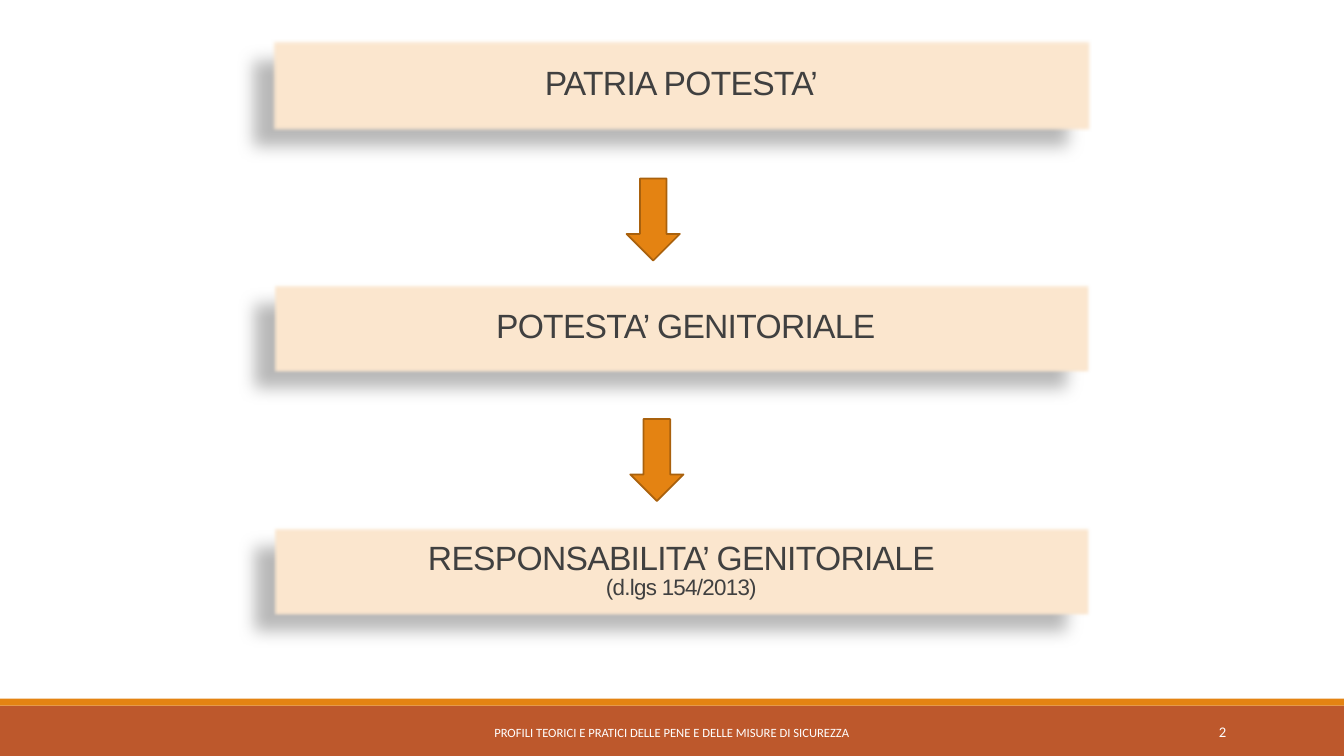
"""Build the slide on the path from patria potestà to responsabilità genitoriale."""
from lxml.etree import fromstring
from pptx import Presentation
from pptx.dml.color import RGBColor
from pptx.enum.shapes import MSO_SHAPE
from pptx.enum.text import MSO_ANCHOR, MSO_AUTO_SIZE, PP_ALIGN
from pptx.util import Pt

THEME = {
    "rust": RGBColor.from_string("BD582C"),
    "orange": RGBColor.from_string("E48312"),
    "arrow_edge": RGBColor.from_string("A9610D"),
    "cream": RGBColor.from_string("FBE6CE"),
    "ink": RGBColor.from_string("404040"),
    "white": RGBColor.from_string("FFFFFF"),
    "heading": Pt(24),
    "note": Pt(16),
    "footer": Pt(9),
    "number": Pt(10.5),
}
SOFT_SHADOW = """<a:effectLst xmlns:a="http://schemas.openxmlformats.org/drawingml/2006/main">
<a:outerShdw blurRad="149860" dist="250190" dir="8460000" algn="tl" rotWithShape="0">
<a:srgbClr val="000000"><a:alpha val="28000"/></a:srgbClr></a:outerShdw>
<a:softEdge rad="31750"/></a:effectLst>"""


def write(shape, lines, font, color, align, spacing=None, tracking=None):
    frame = shape.text_frame
    frame_format = {"word_wrap": True, "auto_size": MSO_AUTO_SIZE.NONE,
                    "vertical_anchor": MSO_ANCHOR.MIDDLE}
    for key, value in frame_format.items():
        setattr(frame, key, value)
    for index, (text, size) in enumerate(lines):
        paragraph = frame.add_paragraph() if index else frame.paragraphs[0]
        paragraph.alignment = align
        paragraph.line_spacing = spacing
        run = paragraph.add_run()
        run.text = text
        for key, value in {"name": font, "size": size, "bold": False}.items():
            setattr(run.font, key, value)
        run.font.color.rgb = color
        if tracking:
            run.font._element.set("spc", str(tracking))


def paint(shape, fill, edge=None):
    shape.shadow.inherit = False
    shape.fill.solid()
    shape.fill.fore_color.rgb = fill
    if edge:
        shape.line.color.rgb = edge
        shape.line.width = Pt(1.25)
    else:
        shape.line.fill.background()


deck = Presentation()
deck.slide_width, deck.slide_height = Pt(960), Pt(540)
slide = deck.slides.add_slide(deck.slide_layouts[5])
shapes = slide.shapes

for top, height, color in ((504, 36, "rust"), (499, 5, "orange")):
    band = shapes.add_shape(MSO_SHAPE.RECTANGLE, 0, Pt(top), Pt(960), Pt(height))
    paint(band, THEME[color])

footers = (
    ("PROFILI TEORICI E PRATICI DELLE PENE E DELLE MISURE DI SICUREZZA",
     290, 379.5, "footer", PP_ALIGN.CENTER),
    ("2", 780, 103, "number", PP_ALIGN.RIGHT),
)
for text, left, width, size, align in footers:
    footer = shapes.add_textbox(Pt(left), Pt(508.5), Pt(width), Pt(28.8))
    write(footer, [(text, THEME[size])], "Calibri", THEME["white"], align)

stages = (
    [("PATRIA POTESTA’", THEME["heading"])],
    [(" POTESTA’ GENITORIALE", THEME["heading"])],
    [("RESPONSABILITA’ GENITORIALE", THEME["heading"]),
     ("(d.lgs 154/2013)", THEME["note"])],
)
for index, lines in enumerate(stages):
    place = Pt(193.7), Pt(28.1 + 173.5 * index), Pt(586), Pt(66)
    if index:
        stage = shapes.add_shape(MSO_SHAPE.RECTANGLE, *place)
    else:
        stage = shapes.title
        stage.left, stage.top, stage.width, stage.height = place
    paint(stage, THEME["cream"])
    plain_effects = stage._element.spPr.find(
        "{http://schemas.openxmlformats.org/drawingml/2006/main}effectLst")
    plain_effects.getparent().replace(plain_effects, fromstring(SOFT_SHADOW))
    write(stage, lines, "Arial", THEME["ink"], PP_ALIGN.CENTER, 0.85, -50)

for left, top in ((447.6, 127.5), (450.2, 299.3)):
    arrow = shapes.add_shape(MSO_SHAPE.DOWN_ARROW, Pt(left), Pt(top), Pt(38), Pt(58.6))
    paint(arrow, THEME["orange"], THEME["arrow_edge"])

deck.save("out.pptx")
